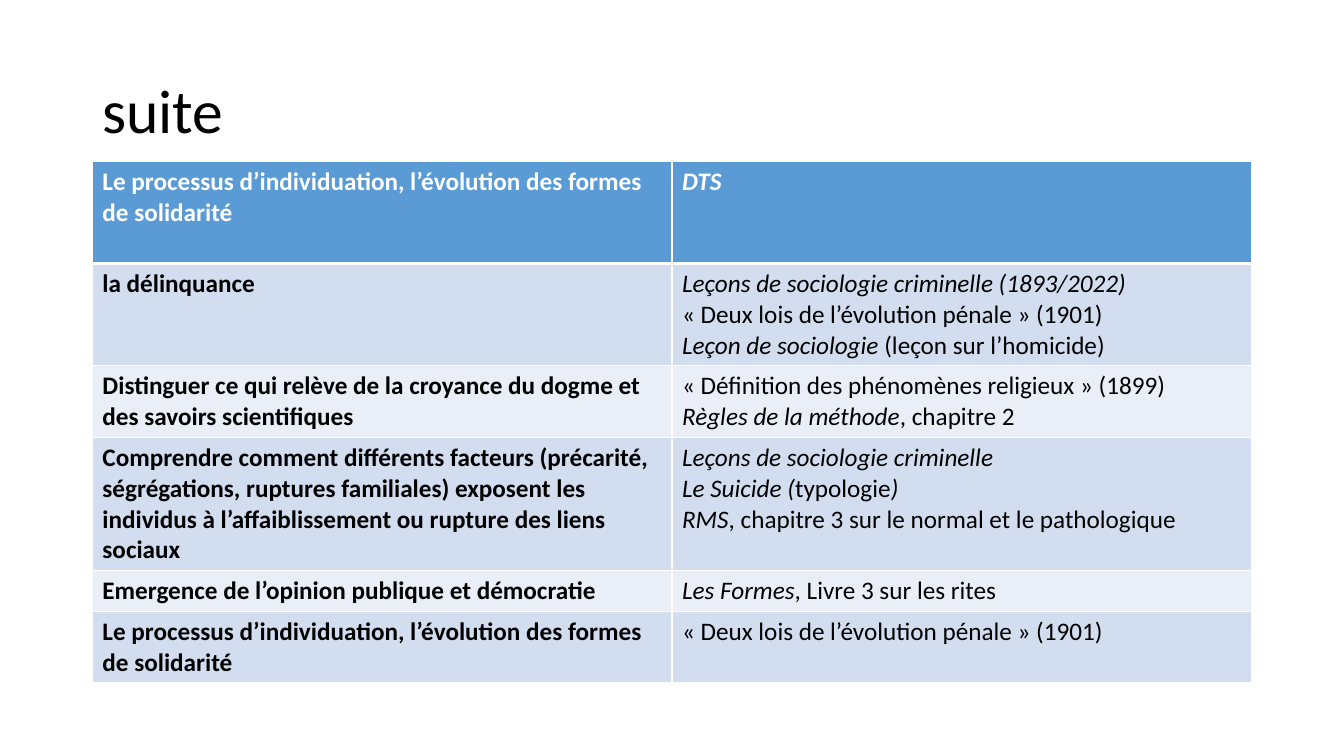
from dataclasses import dataclass

from lxml.etree import SubElement as Sub
from pptx import Presentation
from pptx.dml.color import RGBColor
from pptx.enum.text import MSO_ANCHOR as Anchor
from pptx.oxml.ns import qn
from pptx.slide import Slide
from pptx.table import _Cell as Cell
from pptx.text.text import _Paragraph as Para
from pptx.util import Inches, Pt

BLACK = RGBColor(0x00, 0x00, 0x00)
WHITE = RGBColor(0xFF, 0xFF, 0xFF)
BLUE = RGBColor(0x5B, 0x9B, 0xD5)
BANDS = (RGBColor(0xEA, 0xEF, 0xF7), RGBColor(0xD2, 0xDE, 0xEF))
FONT = "Calibri"

# Grid of 160 columns by 150 rows
WIDE, HIGH = Inches(40 / 3), Inches(7.5)
COL, ROW = WIDE / 160, HIGH / 150
LEFT, SPAN = 11, 138
PAD, LINE = 2, 6.1  # cell padding and text line, in grid rows


@dataclass(frozen=True)
class Bit:
    text: str
    slant: bool = False


@dataclass(frozen=True)
class Entry:
    theme: str
    works: tuple[tuple[Bit, ...], ...]
    lines: int


def it(text: str) -> Bit:
    return Bit(text, True)


LAWS = (Bit("« Deux lois de l’évolution pénale » (1901)"),)
FORMS = "Le processus d’individuation, l’évolution des formes de solidarité"
ENTRIES = (
    Entry(FORMS + " ", ((it("DTS"),),), 3),
    Entry("la délinquance", (
        (it("Leçons de sociologie criminelle (1893/2022)"),),
        LAWS,
        (it("Leçon de sociologie "), Bit("(leçon sur l’homicide)")),
    ), 3),
    Entry("Distinguer ce qui relève de la croyance du dogme et des savoirs scientifiques", (
        (Bit("« Définition des phénomènes religieux » (1899)"),),
        (it("Règles de la méthode"), Bit(", chapitre 2")),
    ), 2),
    Entry("Comprendre comment différents facteurs (précarité, ségrégations, ruptures "
          "familiales) exposent les individus à l’affaiblissement ou rupture des liens sociaux", (
        (it("Leçons de sociologie criminelle"),),
        (it("Le Suicide ("), Bit("typologie"), it(")")),
        (it("RMS"), Bit(", chapitre 3 sur le normal et le pathologique")),
    ), 4),
    Entry("Emergence de l’opinion publique et démocratie", (
        (it("Les Formes"), Bit(", Livre 3 sur les rites")),
    ), 1),
    Entry(FORMS, (LAWS,), 2),
)


def add_bit(para: Para, bit: Bit, size: int, color: RGBColor, bold: bool = False) -> None:
    run = para.add_run()
    run.text = bit.text
    font = run.font
    font.name, font.size = FONT, Pt(size)
    font.bold, font.italic = bold, bit.slant
    font.color.rgb = color


def add_rules(cell: Cell, top: int, bottom: int) -> None:
    props = cell._tc.get_or_add_tcPr()
    for side, width in (("L", 1), ("R", 1), ("T", top), ("B", bottom)):
        rule = Sub(props, qn(f"a:ln{side}"), w=str(Pt(width)))
        Sub(Sub(rule, qn("a:solidFill")), qn("a:srgbClr"), val=str(WHITE))


def fill_cell(cell: Cell, paras: tuple[tuple[Bit, ...], ...], row: int, bold: bool) -> None:
    head = row == 0
    add_rules(cell, 3 if row == 1 else 1, 3 if head else 1)
    cell.fill.solid()
    cell.fill.fore_color.rgb = BLUE if head else BANDS[row % 2]
    frame = cell.text_frame
    for i, bits in enumerate(paras):
        para = frame.add_paragraph() if i else frame.paragraphs[0]
        for bit in bits:
            add_bit(para, bit, 18, WHITE if head else BLACK, bold or head)


def add_title(slide: Slide, text: str) -> None:
    box = slide.shapes.add_textbox(
        round(LEFT * COL), round(8 * ROW), round(SPAN * COL), round(29 * ROW))
    frame = box.text_frame
    frame.word_wrap = True
    frame.vertical_anchor = Anchor.MIDDLE
    para = frame.paragraphs[0]
    para.line_spacing = 0.9
    add_bit(para, Bit(text), 44, BLACK)


def add_grid(slide: Slide, entries: tuple[Entry, ...]) -> None:
    highs = [round((PAD + LINE * entry.lines) * ROW) for entry in entries]
    table = slide.shapes.add_table(
        len(entries), 2, round(LEFT * COL), round(32 * ROW),
        round(SPAN * COL), sum(highs)).table
    for row, entry in enumerate(entries):
        table.rows[row].height = highs[row]
        fill_cell(table.cell(row, 0), ((Bit(entry.theme),),), row, True)
        fill_cell(table.cell(row, 1), entry.works, row, False)


def main() -> None:
    deck = Presentation()
    deck.slide_width, deck.slide_height = WIDE, HIGH
    slide = deck.slides.add_slide(deck.slide_layouts[6])
    add_title(slide, "suite")
    add_grid(slide, ENTRIES)
    deck.save("out.pptx")


if __name__ == "__main__":
    main()
